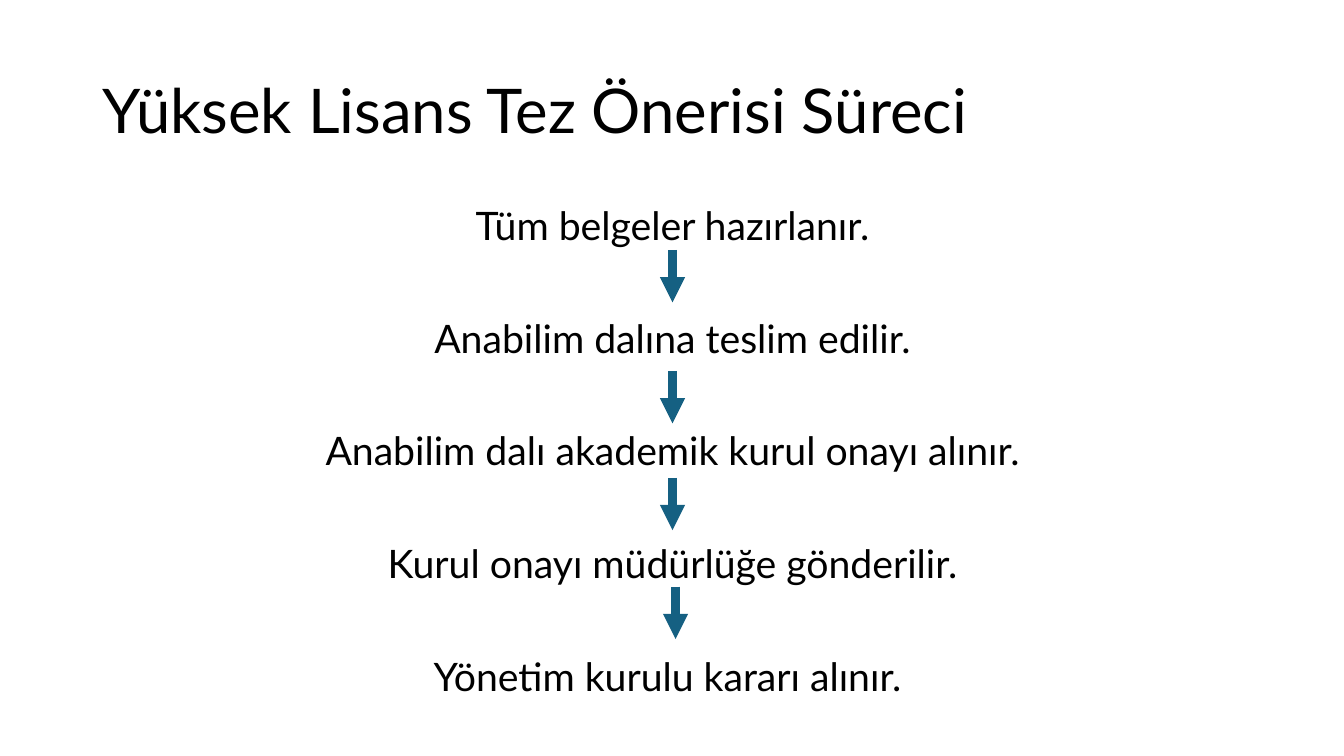
"""Builds the slide on the steps of a master's thesis proposal."""
from lxml import etree
from pptx import Presentation
from pptx import util as u
from pptx.dml.color import RGBColor
from pptx.enum import shapes, text
from pptx.oxml.ns import qn


def paint(colour_format, colour):
    colour_format.rgb = RGBColor.from_string(colour)


def style(paragraph, size, align):
    paragraph.alignment = align
    paragraph.line_spacing = 0.9
    paragraph.font.size = u.Pt(size)
    paragraph.font.name = "Lato"
    paint(paragraph.font.color, "000000")


deck = Presentation()
deck.slide_width = u.Inches(13.33)
deck.slide_height = u.Inches(7.5)
slide = deck.slides.add_slide(deck.slide_layouts[5])

heading = slide.shapes.title
heading.left, heading.top = u.Inches(0.92), u.Inches(0.4)
heading.width, heading.height = u.Inches(11.5), u.Inches(1.45)
heading.text_frame.text = "Yüksek Lisans Tez Önerisi Süreci"
heading.text_frame.auto_size = text.MSO_AUTO_SIZE.NONE
heading.text_frame.vertical_anchor = text.MSO_ANCHOR.MIDDLE
style(heading.text_frame.paragraphs[0], 44, text.PP_ALIGN.LEFT)

steps = [
    "Tüm belgeler hazırlanır.",
    "Anabilim dalına teslim edilir.",
    "Anabilim dalı akademik kurul onayı alınır.",
    "Kurul onayı müdürlüğe gönderilir.",
    "Yönetim kurulu kararı alınır. ",
]
process = slide.shapes.add_textbox(
    u.Inches(0.92), u.Inches(2), u.Inches(11.5), u.Inches(5.25)
).text_frame
process.word_wrap = True
process.text = "\n".join(steps)
for index, step in enumerate(process.paragraphs):
    style(step, 28, text.PP_ALIGN.CENTER)
    if index:
        step.space_before = u.Pt(50.25)

for x, top in [(6.67, 2.48), (6.67, 3.68), (6.67, 4.74), (6.7, 5.82)]:
    arrow = slide.shapes.add_connector(
        shapes.MSO_CONNECTOR.STRAIGHT,
        u.Inches(x), u.Inches(top), u.Inches(x), u.Inches(top + 0.52),
    )
    arrow.line.width = u.Pt(6)
    paint(arrow.line.color, "156082")
    etree.SubElement(arrow.line._get_or_add_ln(), qn("a:tailEnd"), type="triangle")
    etree.SubElement(arrow._element.spPr, qn("a:effectLst"))

deck.save("out.pptx")
